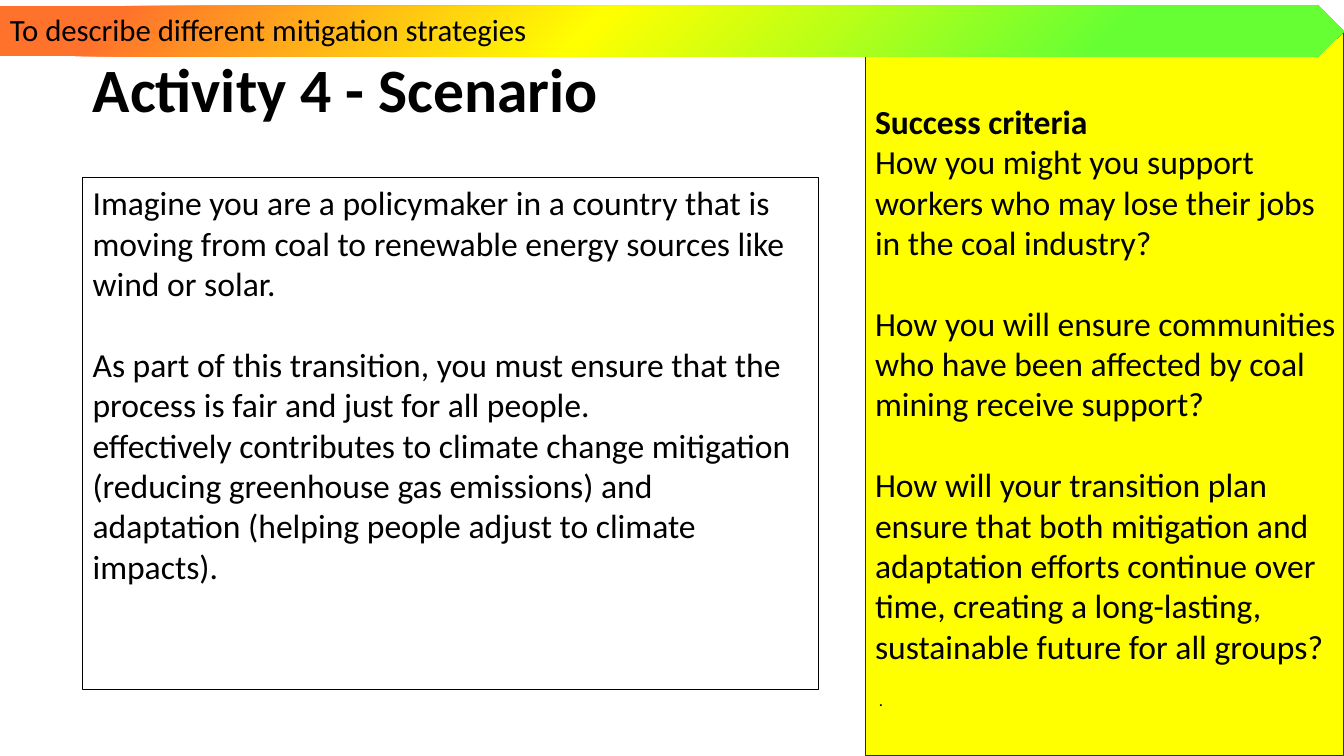
from dataclasses import dataclass

from lxml.etree import SubElement
from pptx import Presentation
from pptx.dml.color import RGBColor
from pptx.enum.shapes import MSO_SHAPE as Preset
from pptx.enum.text import MSO_ANCHOR as Anchor, PP_ALIGN as Align
from pptx.oxml.ns import qn
from pptx.util import Inches, Pt


@dataclass(frozen=True)
class Theme:
    """Colours, font and type sizes of the lesson slide."""
    font: str = "Calibri"
    text: str = "000000"
    outline: str = "000000"
    panel: str = "FFFF00"
    panel_outline: str = "222A35"
    banner: tuple = ((0, "66FF33"), (18, "66FF33"), (56, "FFFF00"),
                     (91, "FF722C"), (100, "FF722C"))
    title_size: int = 44
    body_size: int = 24
    banner_size: int = 22
    small_size: int = 12
    gap: int = 29
    small_gap: int = 17


@dataclass(frozen=True)
class Line:
    """One paragraph with its size, weight and space above."""
    text: str
    size: int
    bold: bool = False
    before: int = 0


THEME = Theme()

SCENARIO = (
    Line("Imagine you are a policymaker in a country that is moving from coal to "
         "renewable energy sources like wind or solar.", THEME.body_size),
    Line("As part of this transition, you must ensure that the process is fair "
         "and just for all people.", THEME.body_size, before=THEME.gap),
    Line("effectively contributes to climate change mitigation (reducing greenhouse "
         "gas emissions) and adaptation (helping people adjust to climate impacts).",
         THEME.body_size),
)

CRITERIA = (
    Line("Success criteria", THEME.body_size, bold=True),
    Line("How you might you support workers who may lose their jobs in the coal "
         "industry?", THEME.body_size),
    Line("How you will ensure communities who have been affected by coal mining "
         "receive support?", THEME.body_size, before=THEME.gap),
    Line("How will your transition plan ensure that both mitigation and adaptation "
         "efforts continue over time, creating a long-lasting, sustainable future "
         "for all groups?", THEME.body_size, before=THEME.gap),
    Line(" .", THEME.small_size, before=THEME.small_gap),
)

OBJECTIVE = (Line("To describe different mitigation strategies", THEME.banner_size),)


def write_lines(shape, lines, anchor=Anchor.TOP, top=0.05, bottom=0.05, right=0.1):
    """Fill a shape with left-aligned paragraphs."""
    frame = shape.text_frame
    frame.word_wrap = True
    frame.vertical_anchor = anchor
    frame.margin_left, frame.margin_right = Inches(0.1), Inches(right)
    frame.margin_top, frame.margin_bottom = Inches(top), Inches(bottom)
    for index, line in enumerate(lines):
        para = frame.add_paragraph() if index else frame.paragraphs[0]
        para.text = line.text
        para.alignment = Align.LEFT
        para.space_before = Pt(line.before)
        para.font.name = THEME.font
        para.font.size = Pt(line.size)
        para.font.bold = line.bold
        para.font.color.rgb = RGBColor.from_string(THEME.text)


def add_block(page, preset, place, fill=None, outline=None):
    """Add a flat preset shape with an optional fill and thin outline."""
    box = page.shapes.add_shape(preset, *map(Inches, place))
    box.shadow.inherit = False
    if fill:
        box.fill.solid()
        box.fill.fore_color.rgb = RGBColor.from_string(fill)
    else:
        box.fill.background()
    if outline:
        box.line.color.rgb = RGBColor.from_string(outline)
        box.line.width = Pt(0.75)
    else:
        box.line.fill.background()
    return box


def set_corner_gradient(shape, stops):
    """Spread a circular gradient from the bottom right corner."""
    shape.fill.gradient()
    gradient = shape._element.spPr.find(qn("a:gradFill"))
    for child in list(gradient):
        gradient.remove(child)
    stop_list = SubElement(gradient, qn("a:gsLst"))
    for percent, colour in stops:
        stop = SubElement(stop_list, qn("a:gs"), pos=str(percent * 1000))
        SubElement(stop, qn("a:srgbClr"), val=colour)
    circle = SubElement(gradient, qn("a:path"))
    circle.set("path", "circle")
    SubElement(circle, qn("a:fillToRect"), l="100000", t="100000")


def set_title(page, text):
    """Place and format the title placeholder."""
    title = page.shapes.title
    title.left, title.top, title.width, title.height = map(
        Inches, (0.82, 0.86, 11.5, 0.79))
    write_lines(title, (Line(text, THEME.title_size, bold=True),),
                Anchor.MIDDLE, bottom=0.72)
    title.text_frame.paragraphs[0].line_spacing = 0.9


def add_banner(page, lines):
    """Add the arrow banner that states the lesson objective."""
    banner = add_block(page, Preset.RIGHT_ARROW, (0, 0.06, 13.33, 0.5))
    banner.adjustments[0] = 1
    banner.adjustments[1] = 0.51
    set_corner_gradient(banner, THEME.banner)
    write_lines(banner, lines)


def main():
    """Build and save the activity slide."""
    deck = Presentation()
    deck.slide_width, deck.slide_height = Inches(13.33), Inches(7.5)
    page = deck.slides.add_slide(deck.slide_layouts[5])
    set_title(page, "Activity 4 - Scenario")
    scenario = add_block(page, Preset.RECTANGLE, (0.82, 1.76, 7.3, 5.08),
                         outline=THEME.outline)
    write_lines(scenario, SCENARIO, right=0.16)
    criteria = add_block(page, Preset.RECTANGLE, (8.58, 0.31, 4.75, 7.19),
                         THEME.panel, THEME.panel_outline)
    write_lines(criteria, CRITERIA, top=0.69, right=0.03)
    add_banner(page, OBJECTIVE)
    deck.save("out.pptx")


if __name__ == "__main__":
    main()
